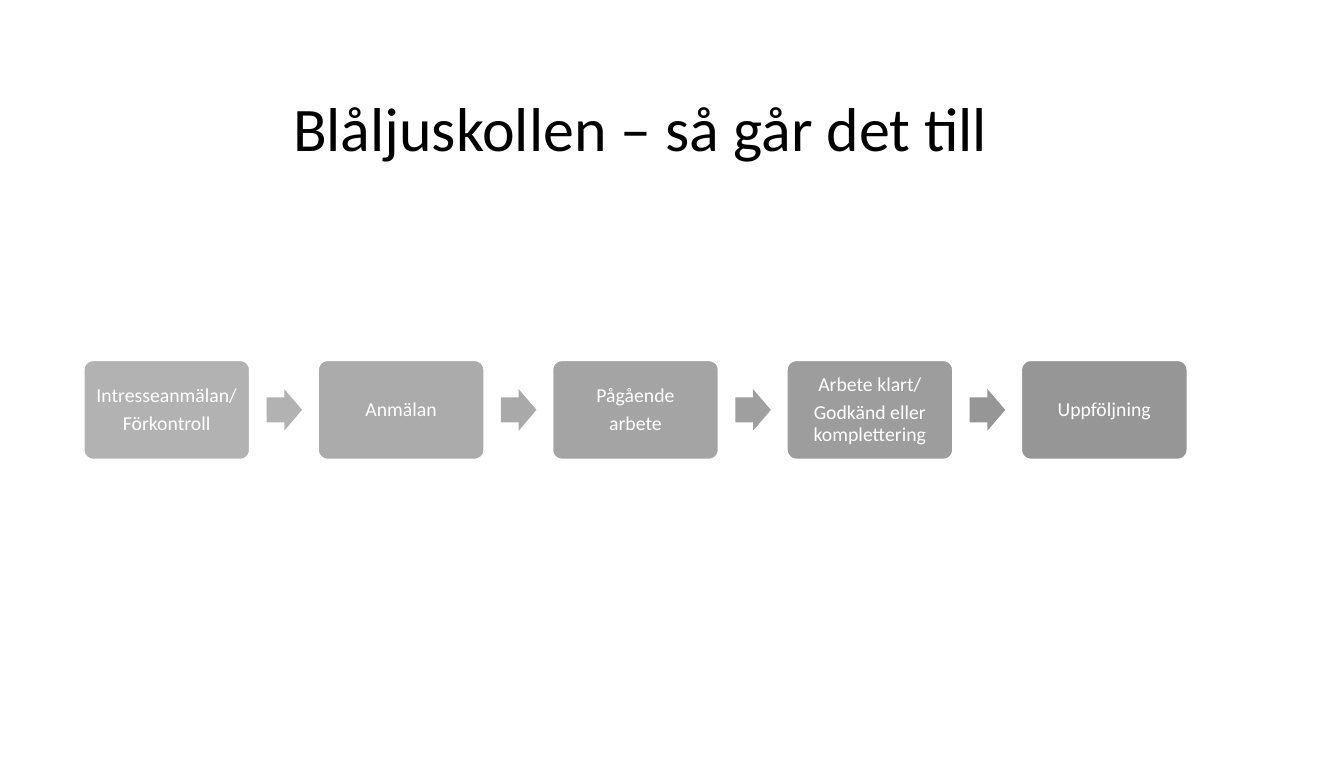
from pptx import Presentation
from pptx.dml.color import RGBColor
from pptx.enum.shapes import MSO_SHAPE
from pptx.enum.text import MSO_ANCHOR, PP_ALIGN
from pptx.util import Inches, Pt

FONT = "Calibri"
FLOW_LEFT, STEP_TOP = 0.82, 3.55
STEP_WIDTH, STEP_HEIGHT = 1.65, 0.99
STEP_PITCH = 9.25 / 4
ARROW_OFFSET, ARROW_WIDTH, ARROW_HEIGHT = 1.81, 0.35, 0.41

# Paragraphs of each step, its fill, and the fill of the arrow after it
STEPS = [
    (["Intresseanmälan/", "Förkontroll"], "B2B2B2", "B2B2B2"),
    (["Anmälan"], "ABABAB", "A9A9A9"),
    (["Pågående", "arbete"], "A4A4A4", "9F9F9F"),
    (["Arbete klart/", "Godkänd eller komplettering"], "9D9D9D", "969696"),
    (["Uppföljning"], "969696", None),
]


def color(hex_code):
    return RGBColor.from_string(hex_code)


def write_text(box, lines, size, ink, anchor, inset, **para_format):
    """Fill a shape with centred paragraphs; para_format sets paragraph properties."""
    frame = box.text_frame
    frame.word_wrap = True
    frame.vertical_anchor = anchor
    frame.margin_left = frame.margin_right = Inches(inset)
    frame.margin_top = frame.margin_bottom = Inches(inset)
    for index, line in enumerate(lines):
        para = frame.add_paragraph() if index else frame.paragraphs[0]
        para.alignment = PP_ALIGN.CENTER
        for name, value in para_format.items():
            setattr(para, name, value)
        span = para.add_run()
        span.text = line
        span.font.name = FONT
        span.font.size = Pt(size)
        span.font.color.rgb = color(ink)


def add_filled_shape(page, kind, left, top, width, height, fill, adjustments):
    shape = page.shapes.add_shape(
        kind, Inches(left), Inches(top), Inches(width), Inches(height))
    shape.shadow.inherit = False
    shape.fill.solid()
    shape.fill.fore_color.rgb = color(fill)
    shape.line.fill.background()
    for index, value in enumerate(adjustments):
        shape.adjustments[index] = value
    return shape


def add_step(page, left, lines, fill):
    box = add_filled_shape(page, MSO_SHAPE.ROUNDED_RECTANGLE, left, STEP_TOP,
                           STEP_WIDTH, STEP_HEIGHT, fill, [0.1])
    box.line.color.rgb = color("FFFFFF")
    box.line.width = Pt(2)
    write_text(box, lines, size=14, ink="FFFFFF", anchor=MSO_ANCHOR.MIDDLE,
               inset=0.06, line_spacing=0.9, space_after=Pt(5))


def add_arrow(page, left, fill):
    top = STEP_TOP + (STEP_HEIGHT - ARROW_HEIGHT) / 2
    add_filled_shape(page, MSO_SHAPE.RIGHT_ARROW, left, top,
                     ARROW_WIDTH, ARROW_HEIGHT, fill, [0.6, 0.5])


def add_title(page, text):
    title = page.shapes.title
    title.left, title.top = Inches(0.67), Inches(0.79)
    title.width, title.height = Inches(11.44), Inches(0.6)
    write_text(title, [text], size=44, ink="000000",
               anchor=MSO_ANCHOR.TOP, inset=0.09)


def main():
    deck = Presentation()
    deck.slide_width, deck.slide_height = Inches(13.26), Inches(7.5)
    page = deck.slides.add_slide(deck.slide_layouts.get_by_name("Title Only"))
    add_title(page, "Blåljuskollen – så går det till ")
    for index, (lines, fill, arrow_fill) in enumerate(STEPS):
        left = FLOW_LEFT + index * STEP_PITCH
        add_step(page, left, lines, fill)
        if arrow_fill:
            add_arrow(page, left + ARROW_OFFSET, arrow_fill)
    deck.save("out.pptx")


if __name__ == "__main__":
    main()
